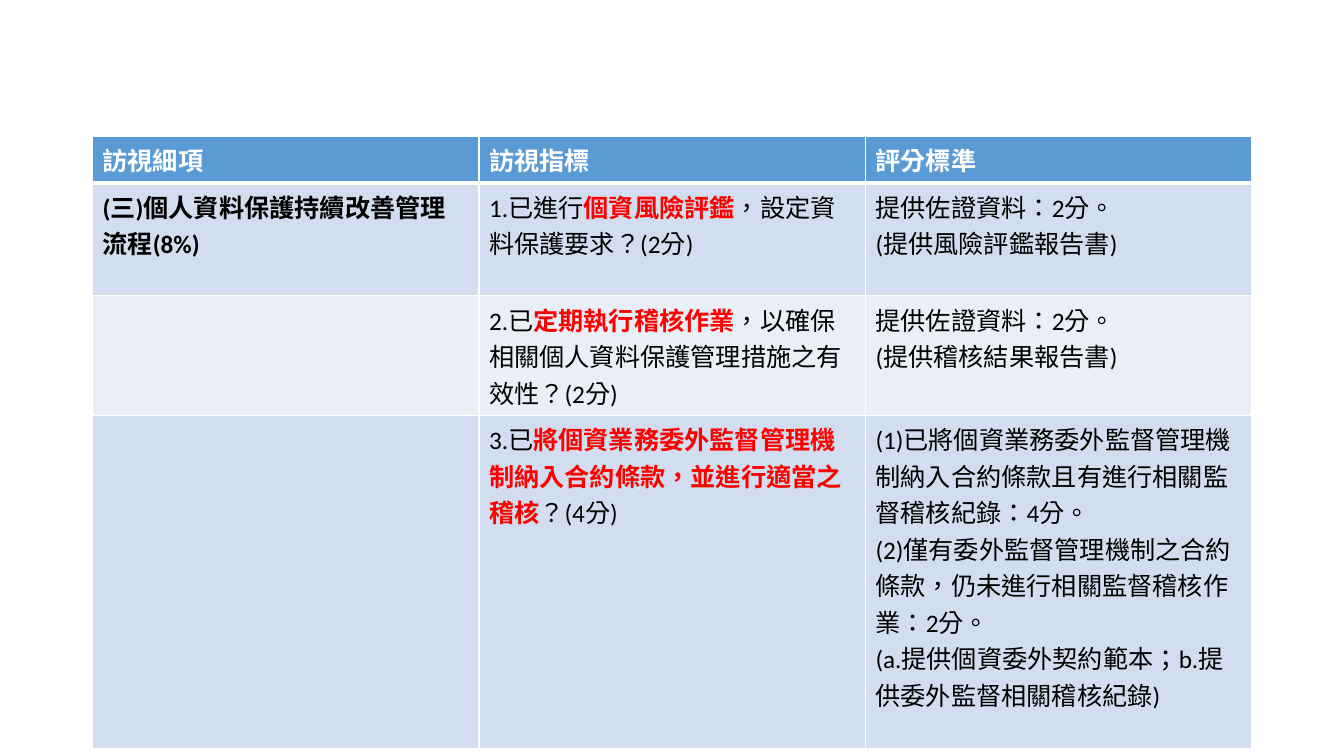
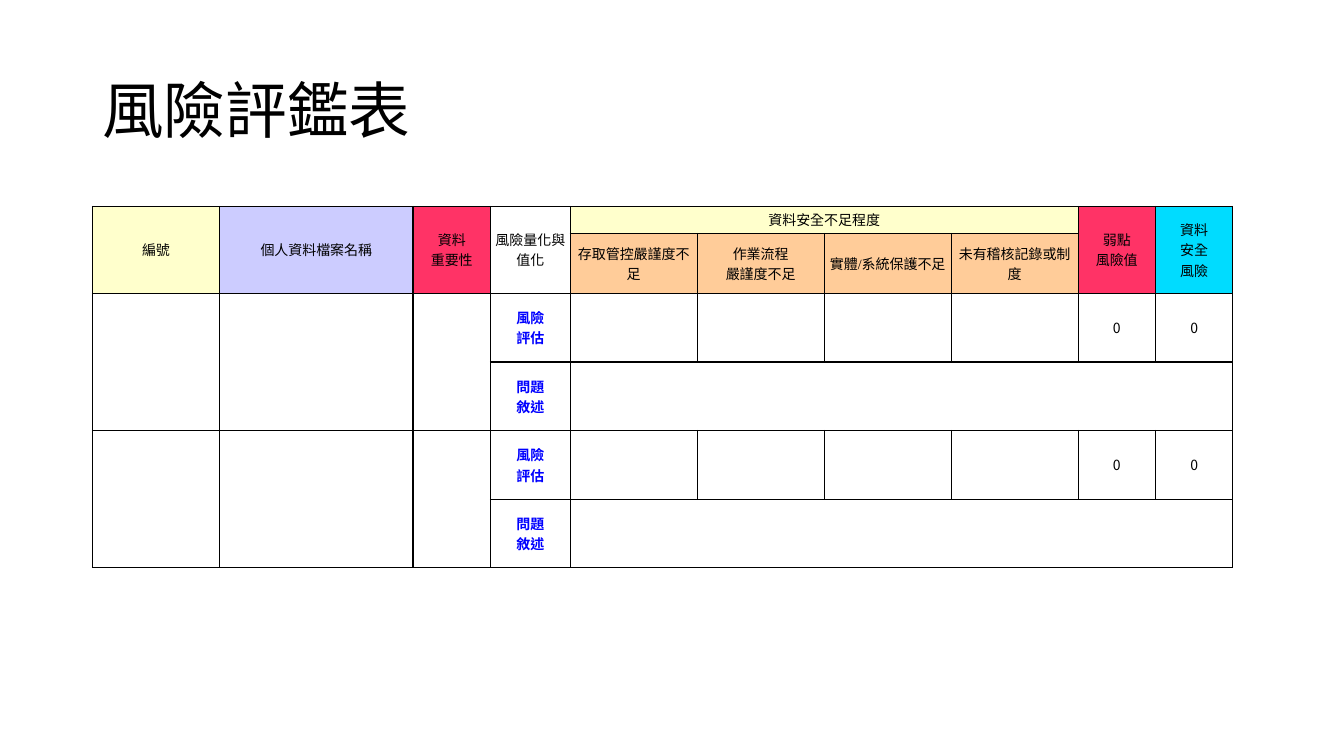
from dataclasses import dataclass
from lxml.etree import SubElement
from pptx import Presentation
from pptx.dml.color import RGBColor
from pptx.enum.text import MSO_ANCHOR as Anchor, PP_ALIGN as Align
from pptx.oxml import parse_xml
from pptx.oxml.ns import nsdecls, qn
from pptx.util import Cm, Pt


@dataclass(frozen=True)
class Style:
    size: float
    font: str
    color: str
    bold: bool = False
    asian: str = "Noto Sans CJK TC"


class Theme:
    white, black = "FFFFFF", "000000"
    blue, pale, paler = "5B9BD5", "D2DEEF", "EAEFF7"
    cream, lilac, rose = "FFFFCC", "CCCCFF", "FF3366"
    cyan, peach = "00DCFF", "FFCC99"
    title = Style(44, "Noto Sans CJK SC", black, asian="Noto Sans CJK SC")
    head = Style(18, "Calibri", white, True)
    topic = Style(18, "Calibri", black, True)
    body = Style(18, "Calibri", black)
    key = Style(18, "Calibri", "FF0000", True)
    form = Style(10, "Times New Roman", black)
    label = Style(10, "Times New Roman", "0000FF", True)
    score = Style(10, "Noto Sans CJK TC", black)


CRITERIA_HEAD = ["訪視細項", "訪視指標", "評分標準"]
CRITERIA = [
    ("(三)個人資料保護持續改善管理流程(8%)",
     ("1.已進行", "個資風險評鑑", "，設定資料保護要求？(2分)"),
     ["提供佐證資料：2分。", "(提供風險評鑑報告書)"]),
    ("",
     ("2.已", "定期執行稽核作業", "，以確保相關個人資料保護管理措施之有效性？(2分)"),
     ["提供佐證資料：2分。", "(提供稽核結果報告書)"]),
    ("",
     ("3.已", "將個資業務委外監督管理機制納入合約條款，並進行適當之稽核", "？(4分)"),
     ["(1)已將個資業務委外監督管理機制納入合約條款且有進行相關監督稽核紀錄：4分。",
      "(2)僅有委外監督管理機制之合約條款，仍未進行相關監督稽核作業：2分。",
      "(a.提供個資委外契約範本；b.提供委外監督相關稽核紀錄)"]),
]
CRITERIA_COLUMNS = [9.74] * 3
CRITERIA_ROWS = [1.17, 2.84, 3.02, 8.38]

RISK_TITLE = "風險評鑑表"
TALL_HEADS = [
    (0, "編號", Theme.cream),
    (1, "個人資料檔案名稱", Theme.lilac),
    (2, "資料\n重要性", Theme.rose),
    (3, "風險量化與值化", None),
    (8, "弱點\n風險值", Theme.rose),
    (9, "資料\n安全\n風險", Theme.cyan),
]
GROUP_HEAD = "資料安全不足程度"
GAPS = ["存取管控嚴謹度不足", "作業流程\n嚴謹度不足", "實體/系統保護不足", "未有稽核記錄或制度"]
GAP_COLUMN = 4
ASSESS, DESCRIBE = "風險\n評估", "問題\n敘述"
SCORES = {8: "0", 9: "0"}
RECORD_STARTS = [2, 4]
RISK_COLUMNS = [3.2, 4.88, 1.95, 2.01, 3.2, 3.2, 3.2, 3.2, 1.95, 1.95]
RISK_ROWS = [0.68, 1.51] + [1.73] * 4


def add_run(para, text, style):
    for index, line in enumerate(text.split("\n")):
        if index:
            para.add_line_break()
        span = para.add_run()
        span.text = line
        font = span.font
        font.size, font.name, font.bold = Pt(style.size), style.font, style.bold
        font.color.rgb = RGBColor.from_string(style.color)
        properties = span._r.get_or_add_rPr()
        properties.set("lang", "zh-TW")
        SubElement(properties, qn("a:ea")).set("typeface", style.asian)


def write(frame, paragraphs, align=None):
    for index, runs in enumerate(paragraphs):
        para = frame.add_paragraph() if index else frame.paragraphs[0]
        para.alignment = align
        for text, style in runs:
            add_run(para, text, style)


def set_fill(cell, color):
    if color:
        cell.fill.solid()
        cell.fill.fore_color.rgb = RGBColor.from_string(color)
    else:
        cell.fill.background()


def set_borders(cell, color, bottom=1):
    properties = cell._tc.get_or_add_tcPr()
    for index, side in enumerate("LRTB"):
        width = Pt(bottom if side == "B" else 1)
        properties.insert(index, parse_xml(
            f'<a:ln{side} {nsdecls("a")} w="{width}"><a:solidFill>'
            f'<a:srgbClr val="{color}"/></a:solidFill></a:ln{side}>'))


def add_grid(page, left, top, columns, rows):
    grid = page.shapes.add_table(
        len(rows), len(columns), Cm(left), Cm(top), Cm(sum(columns)), Cm(sum(rows))).table
    grid.first_row = grid.horz_banding = False
    for column, width in zip(grid.columns, columns):
        column.width = Cm(width)
    for row, height in zip(grid.rows, rows):
        row.height = Cm(height)
    return grid


def build_criteria(page):
    grid = add_grid(page, 2.33, 3.44, CRITERIA_COLUMNS, CRITERIA_ROWS)
    contents = [[[[(text, Theme.head)]] for text in CRITERIA_HEAD]]
    for topic, (before, key, after), standards in CRITERIA:
        contents.append([
            [[(topic, Theme.topic)]] if topic else [],
            [[(before, Theme.body), (key, Theme.key), (after, Theme.body)]],
            [[(line, Theme.body)] for line in standards],
        ])
    fills = [Theme.blue, Theme.pale, Theme.paler, Theme.pale]
    for row, (line, fill) in enumerate(zip(contents, fills)):
        for column, paragraphs in enumerate(line):
            cell = grid.cell(row, column)
            write(cell.text_frame, paragraphs)
            set_fill(cell, fill)
            set_borders(cell, Theme.white, 1 if row else 3)


def build_risk(page):
    box = page.shapes.add_textbox(Cm(2.33), Cm(1.01), Cm(29.21), Cm(3.68))
    frame = box.text_frame
    frame.word_wrap, frame.vertical_anchor = True, Anchor.MIDDLE
    write(frame, [[(RISK_TITLE, Theme.title)]])
    frame.paragraphs[0].line_spacing = 0.9

    grid = add_grid(page, 2.33, 5.2, RISK_COLUMNS, RISK_ROWS)
    last = len(RISK_COLUMNS) - 1
    entries, fills = {}, {}
    for column, text, fill in TALL_HEADS:
        entries[0, column] = text, Theme.form
        fills[0, column] = fill
        grid.cell(0, column).merge(grid.cell(1, column))
    entries[0, GAP_COLUMN] = GROUP_HEAD, Theme.form
    fills[0, GAP_COLUMN] = Theme.cream
    grid.cell(0, GAP_COLUMN).merge(grid.cell(0, GAP_COLUMN + len(GAPS) - 1))
    for column, text in enumerate(GAPS, GAP_COLUMN):
        entries[1, column] = text, Theme.form
        fills[1, column] = Theme.peach
    for row in RECORD_STARTS:
        entries[row, 3] = ASSESS, Theme.label
        entries[row + 1, 3] = DESCRIBE, Theme.label
        for column, text in SCORES.items():
            entries[row, column] = text, Theme.score
        for column in range(3):
            grid.cell(row, column).merge(grid.cell(row + 1, column))
        grid.cell(row + 1, GAP_COLUMN).merge(grid.cell(row + 1, last))

    for row in range(len(RISK_ROWS)):
        for column in range(len(RISK_COLUMNS)):
            cell = grid.cell(row, column)
            cell.margin_left = cell.margin_right = Cm(0.05)
            cell.margin_top = cell.margin_bottom = 0
            cell.vertical_anchor = Anchor.MIDDLE
            if (row, column) in entries:
                write(cell.text_frame, [[entries[row, column]]], Align.CENTER)
            else:
                ending = SubElement(cell.text_frame.paragraphs[0]._p, qn("a:endParaRPr"))
                ending.set("sz", str(Theme.form.size * 100))
            set_fill(cell, fills.get((row, column)))
            set_borders(cell, Theme.black)


def main():
    deck = Presentation()
    deck.slide_width, deck.slide_height = Cm(33.87), Cm(19.05)
    for build in (build_criteria, build_risk):
        build(deck.slides.add_slide(deck.slide_layouts[6]))
    deck.save("out.pptx")


if __name__ == "__main__":
    main()
